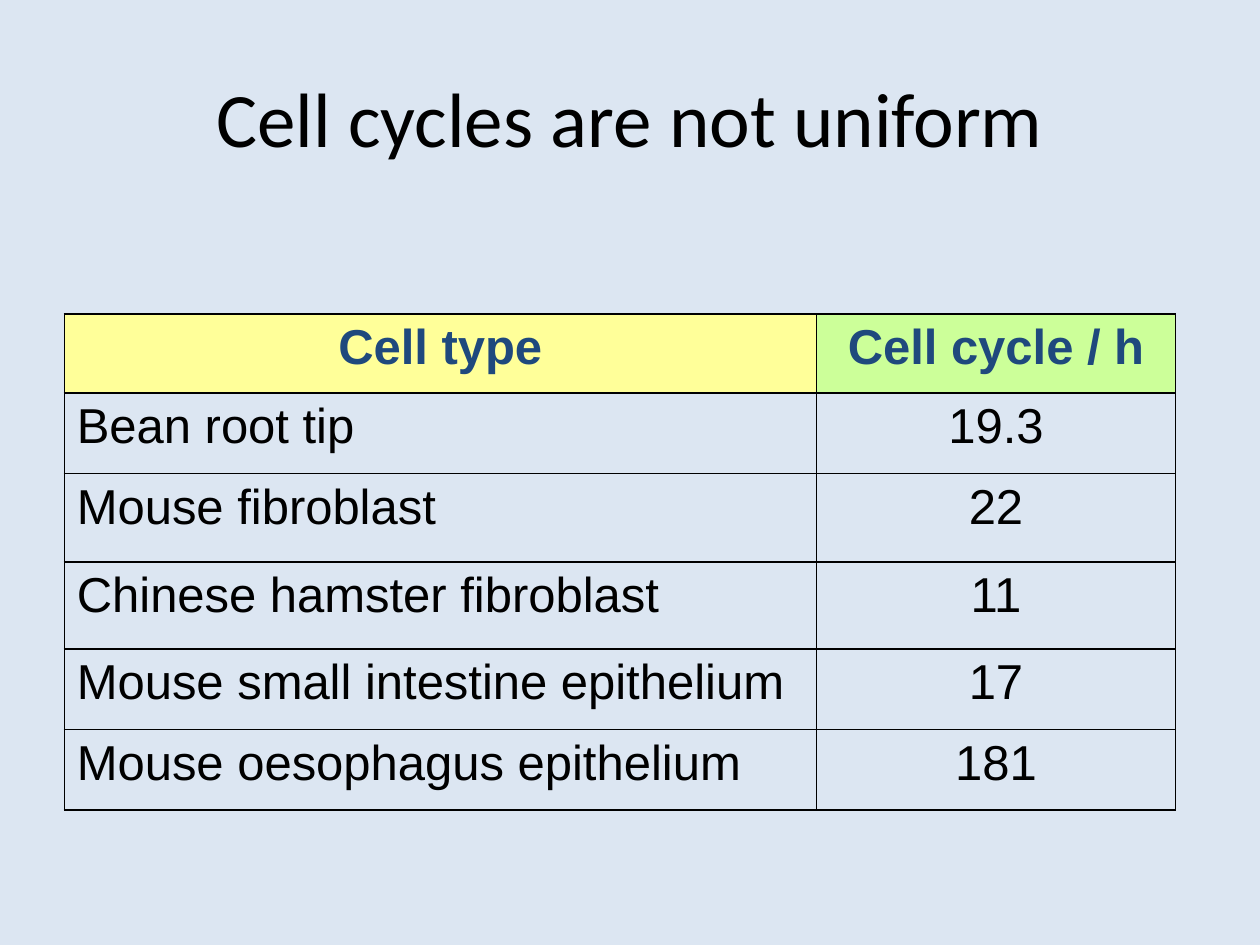
from lxml import etree
from pptx import Presentation
from pptx.dml.color import RGBColor
from pptx.enum.text import MSO_ANCHOR, PP_ALIGN
from pptx.oxml.ns import qn
from pptx.util import Inches, Pt

CENTER, LEFT = PP_ALIGN.CENTER, PP_ALIGN.LEFT
MIDDLE, TOP = MSO_ANCHOR.MIDDLE, MSO_ANCHOR.TOP
BLACK, NAVY = "000000", "1F497D"
BORDERS = {"a:lnL": 0.75, "a:lnR": 0.75, "a:lnT": 1, "a:lnB": 1}


def color(value):
    return RGBColor.from_string(value)


def format_paragraph(para, text, align, formats, shade):
    para.alignment = align
    span = para.add_run()
    span.text = text
    for name, value in formats.items():
        setattr(span.font, name, value)
    span.font.color.rgb = color(shade)


# Slide and background
deck = Presentation()
deck.slide_width, deck.slide_height = Inches(10), Inches(7.5)
page = deck.slides.add_slide(deck.slide_layouts[5])
page.background.fill.solid()
page.background.fill.fore_color.rgb = color("DCE6F2")

# Title
title = page.shapes.title
title.left, title.top = int(deck.slide_width * 0.05), int(deck.slide_height * 0.04)
title.width, title.height = int(deck.slide_width * 0.9), Inches(1.25)
title.text_frame.vertical_anchor = MIDDLE
format_paragraph(title.text_frame.paragraphs[0], "Cell cycles are not uniform",
                 CENTER, {"name": "Calibri", "size": Pt(44)}, BLACK)

# Table grid
rows = [
    ("Cell type", "Cell cycle / h"),
    ("Bean root tip", "19.3"),
    ("Mouse fibroblast", "22"),
    ("Chinese hamster fibroblast", "11"),
    ("Mouse small intestine epithelium", "17"),
    ("Mouse oesophagus epithelium", "181"),
]
column_widths = [5.97, 2.85]
row_heights = [0.63, 0.64, 0.7, 0.69, 0.64, 0.64]
header_fills = ["FFFF99", "CCFF99"]

table = page.shapes.add_table(
    len(rows), len(column_widths), Inches(0.51), Inches(2.49),
    Inches(sum(column_widths)), Inches(sum(row_heights))).table
table.horz_banding = False
for column, width in zip(table.columns, column_widths):
    column.width = Inches(width)
for row, height in zip(table.rows, row_heights):
    row.height = Inches(height)

# Cell text, borders and fills
for r, texts in enumerate(rows):
    for c, text in enumerate(texts):
        cell = table.cell(r, c)
        header = r == 0
        cell.vertical_anchor = TOP
        para = cell.text_frame.paragraphs[0]
        format_paragraph(para, text, CENTER if header or c == 1 else LEFT,
                         {"name": "Arial", "size": Pt(28), "bold": header},
                         NAVY if header else BLACK)
        properties = para._p.get_or_add_pPr()
        properties.set("marL", str(Inches(0.38)))
        properties.set("indent", str(-Inches(0.38)))

        cell_properties = cell._tc.get_or_add_tcPr()
        for tag, width in BORDERS.items():
            line = etree.SubElement(cell_properties, qn(tag), w=str(Pt(width)))
            solid = etree.SubElement(line, qn("a:solidFill"))
            etree.SubElement(solid, qn("a:srgbClr"), val=BLACK)
        if header:
            cell.fill.solid()
            cell.fill.fore_color.rgb = color(header_fills[c])
        else:
            cell.fill.background()

deck.save("out.pptx")
